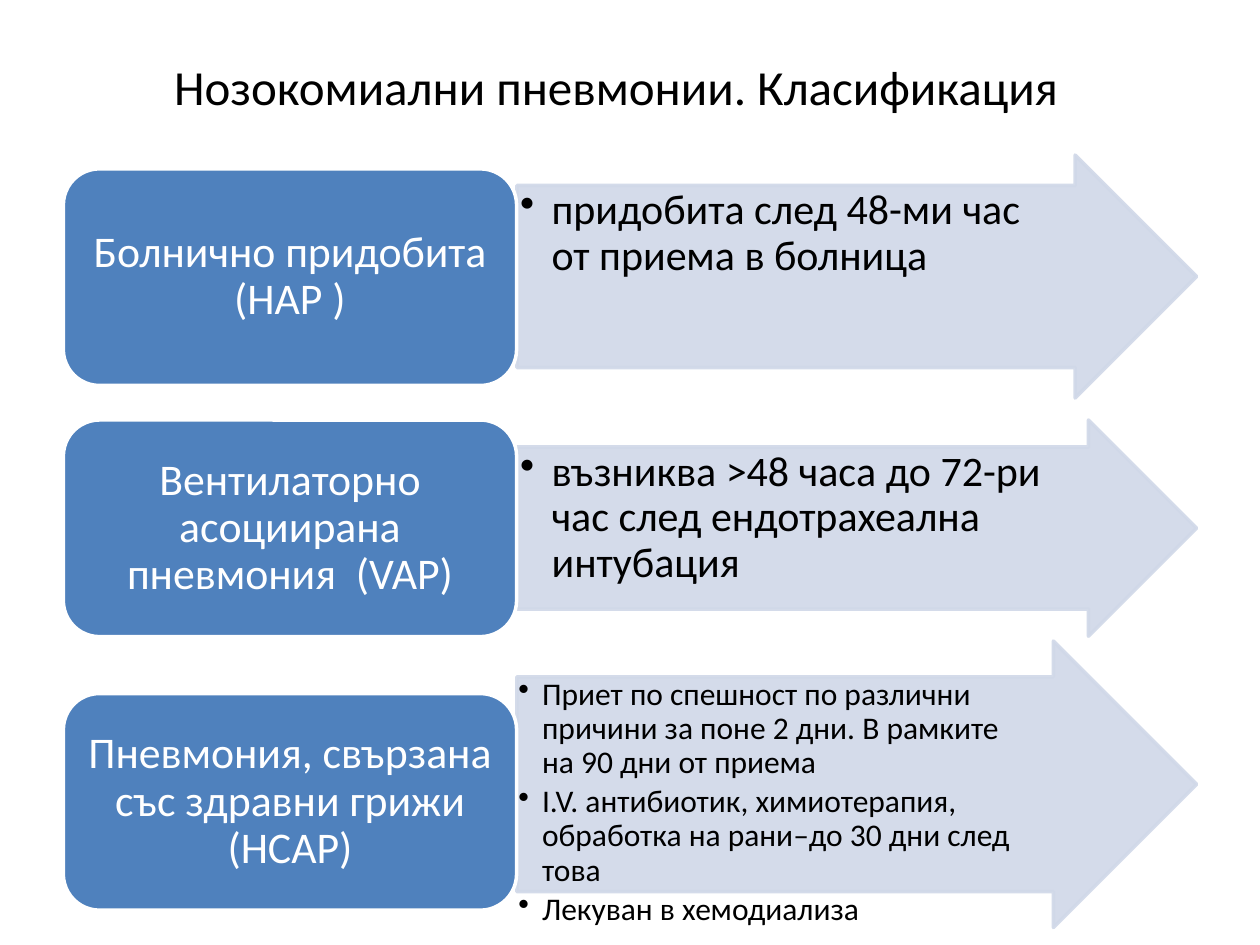
from lxml.etree import SubElement
from pptx import Presentation
from pptx.dml.color import RGBColor
from pptx.enum.shapes import MSO_SHAPE
from pptx.enum.text import MSO_ANCHOR, PP_ALIGN
from pptx.oxml.ns import qn
from pptx.util import Pt

COLORS = {"text": "000000", "category": "4F81BD", "light": "FFFFFF", "arrow": "D0D8E8"}

CATEGORIES = [
    ("Болнично придобита (HAP )", 96.5, 88.6, 138.8, 24, 18, 1.8,
     ["придобита след 48-ми час от приема в болница"]),
    ("Вентилаторно асоциирана пневмония  (VAP)", 240, 240, 123.6, 24, 18, 1.8,
     ["възниква >48 часа до 72-ри час след ендотрахеална интубация"]),
    ("Пневмония, свързана със здравни грижи (HCAP)", 396.3, 366.3, 163.7, 18, 13.5, 0.9,
     ["Приет по спешност по различни причини за поне 2 дни. В рамките на 90 дни от приема",
      "I.V. антибиотик, химиотерапия, обработка на рани–до 30 дни след това",
      "Лекуван в хемодиализа"]),
]


class ClassificationSlide:
    """Draws a title and rows of category boxes with description arrows."""

    def __init__(self, deck, font="Calibri"):
        self.page = deck.slides.add_slide(deck.slide_layouts[5])
        self.font = font

    def style(self, paragraph, size, color):
        paragraph.font.name = self.font
        paragraph.font.size = Pt(size)
        paragraph.font.color.rgb = RGBColor.from_string(COLORS[color])

    def title(self, text, left, top, width, height):
        box = self.page.shapes.title
        box.left, box.top, box.width, box.height = map(Pt, (left, top, width, height))
        frame = box.text_frame
        frame.text = text
        frame.vertical_anchor = MSO_ANCHOR.MIDDLE
        frame.paragraphs[0].alignment = PP_ALIGN.CENTER
        self.style(frame.paragraphs[0], 28, "text")

    def shape(self, kind, bounds, fill, line):
        shape = self.page.shapes.add_shape(kind, *map(Pt, bounds))
        shape.shadow.inherit = False
        shape.fill.solid()
        shape.fill.fore_color.rgb = RGBColor.from_string(COLORS[fill])
        shape.line.color.rgb = RGBColor.from_string(COLORS[line])
        shape.line.width = Pt(2)
        shape.text_frame.word_wrap = True
        return shape

    def category(self, text, top):
        box = self.shape(MSO_SHAPE.ROUNDED_RECTANGLE, (36.2, top, 259, 123.8), "category", "light")
        frame = box.text_frame
        frame.text = text
        frame.vertical_anchor = MSO_ANCHOR.MIDDLE
        paragraph = frame.paragraphs[0]
        paragraph.alignment = PP_ALIGN.CENTER
        paragraph.line_spacing = 0.9
        self.style(paragraph, 25, "light")

    def arrow(self, points, top, height, size, indent, inset):
        arrow = self.shape(MSO_SHAPE.RIGHT_ARROW, (295.4, top, 388.4, height), "arrow", "arrow")
        arrow.adjustments[0], arrow.adjustments[1] = 0.75, 0.5
        for color in arrow._element.spPr.iter(qn("a:srgbClr")):
            SubElement(color, qn("a:alpha"), val="90000")
        frame = arrow.text_frame
        frame.vertical_anchor = MSO_ANCHOR.TOP
        frame.margin_left = frame.margin_top = frame.margin_bottom = Pt(inset)
        frame.margin_right = Pt(inset + height / 4)
        frame.text = "\n".join(points)
        for paragraph in frame.paragraphs:
            self.bullet(paragraph, indent)
            paragraph.alignment = PP_ALIGN.LEFT
            paragraph.line_spacing = 0.9
            paragraph.space_after = Pt(3)
            self.style(paragraph, size, "text")

    def bullet(self, paragraph, indent):
        properties = paragraph._p.get_or_add_pPr()
        properties.set("marL", str(Pt(indent)))
        properties.set("indent", str(-Pt(indent)))
        SubElement(properties, qn("a:buChar"), char="•")


def main():
    deck = Presentation()
    deck.slide_width, deck.slide_height = Pt(720), Pt(540)
    slide = ClassificationSlide(deck)
    slide.title("Нозокомиални пневмонии. Класификация", 20, 21.6, 664, 55.4)
    for name, box_top, arrow_top, height, size, indent, inset, points in CATEGORIES:
        slide.arrow(points, arrow_top, height, size, indent, inset)
        slide.category(name, box_top)
    deck.save("out.pptx")


if __name__ == "__main__":
    main()
